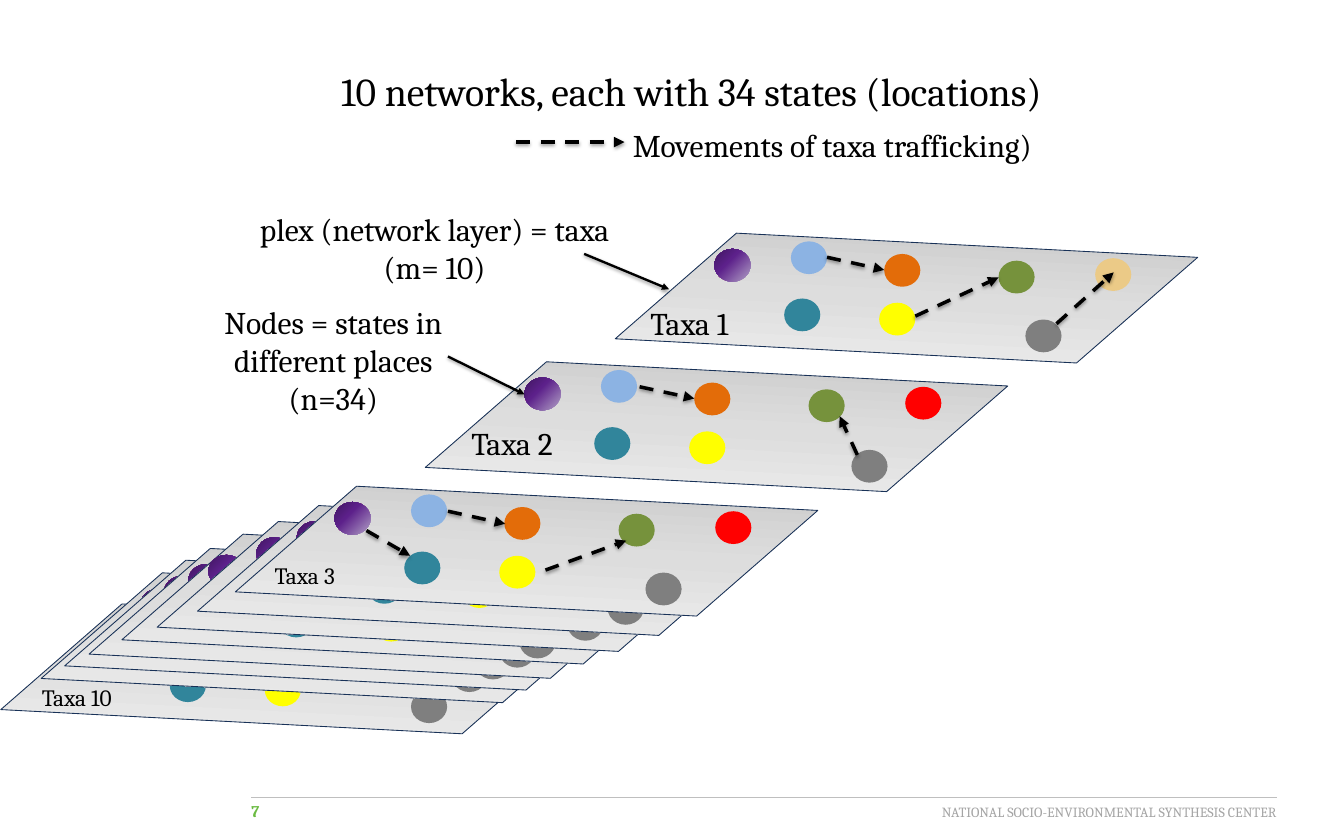
import dataclasses
from typing import Optional

import pptx
import pptx.dml.color
import pptx.enum.dml
import pptx.enum.shapes
import pptx.enum.text
import pptx.oxml
import pptx.oxml.ns
import pptx.util

Inches = pptx.util.Inches
Pt = pptx.util.Pt
RGB = pptx.dml.color.RGBColor.from_string
ALIGN = pptx.enum.text.PP_ALIGN
SHAPES = pptx.enum.shapes.MSO_SHAPE
Point = tuple[float, float]


@dataclasses.dataclass(frozen=True)
class Theme:
    font: str = "Cambria"
    title_size: float = 34
    label_size: float = 27
    small_size: float = 20
    number_size: float = 14
    footer_size: float = 12
    ink: str = "000000"
    number: str = "6BBB42"
    footer: str = "A5A5A5"
    rule: str = "BFBFBF"
    plane_edge: str = "193258"
    plane_stops: tuple = ((0, "CACACA"), (50, "DDDDDD"), (100, "EEEEEE"))
    purple_stops: tuple = ((0, "401660"), (39, "5D218B"), (100, "B2A0C7"))
    red: str = "FF0000"
    sand: str = "EBCA87"


@dataclasses.dataclass(frozen=True)
class State:
    """A node, placed relative to the corner of its network layer."""
    x: float
    y: float
    color: Optional[str]


@dataclasses.dataclass(frozen=True)
class Layer:
    left: float
    top: float
    shift: Point = (0, 0)
    last_color: str = "FF0000"
    gray_at: Point = (4.85, 0.92)


@dataclasses.dataclass(frozen=True)
class Label:
    lines: tuple[str, ...]
    box: tuple[float, float, float, float]
    size: float
    align: ALIGN = ALIGN.LEFT
    color: str = "000000"
    bold: bool = False
    side_inset: float = 0.1


@dataclasses.dataclass(frozen=True)
class Arrow:
    start: Point
    end: Point
    dashed: bool = True


THEME = Theme()
PLANE_SIZE = (6.87, 1.33)
NODE_SIZE = (0.43, 0.39)

# A colour of None stands for the purple gradient
STATES = (
    State(1.15, 0.08, None),
    State(2.06, -0.01, "8CB3E3"),
    State(1.98, 0.67, "31859B"),
    State(4.53, 0.22, "76923C"),
    State(3.17, 0.14, "E36C09"),
    State(3.11, 0.72, "FFFF00"),
)
LAST_STATE_AT = (5.68, 0.19)
GRAY = "7F7F7F"

LAYERS = (
    Layer(0.04, 7.29),
    Layer(0.52, 6.92),
    Layer(0.8, 6.77),
    Layer(1.09, 6.63),
    Layer(1.48, 6.46, shift=(-0.15, 0.06)),
    Layer(1.9, 6.31),
    Layer(2.38, 6.12),
    Layer(2.83, 5.89),
    Layer(7.35, 2.88, last_color=THEME.sand),
    Layer(5.09, 4.41, gray_at=(5.04, 0.94)),
)

ARROWS = (
    Arrow((6.14, 1.69), (7.43, 1.69)),
    Arrow((6.95, 3.02), (7.96, 3.44), dashed=False),
    Arrow((5.33, 4.24), (6.24, 4.69), dashed=False),
    Arrow((9.84, 3.06), (10.52, 3.21)),
    Arrow((10.89, 3.76), (11.88, 3.3)),
    Arrow((12.57, 3.85), (13.25, 3.24)),
    Arrow((7.61, 4.6), (8.26, 4.74)),
    Arrow((10.2, 5.41), (9.99, 4.95)),
    Arrow((6.49, 6.78), (7.45, 6.43)),
    Arrow((4.36, 6.31), (4.88, 6.61)),
    Arrow((5.33, 6.08), (6.01, 6.23)),
)

TITLE = Label(("10 networks, each with 34 states (locations)",),
              (3.96, 0.74, 9.79, 0.67), THEME.title_size)
LABELS = (
    Label(("Movements of taxa trafficking)",), (7.43, 1.45, 5.82, 0.56), THEME.label_size),
    Label(("plex (network layer) = taxa (m= 10)",), (2.83, 2.45, 4.68, 1.01),
          THEME.label_size, ALIGN.CENTER),
    Label(("Nodes = states in different places", "(n=34)"), (2.2, 3.56, 3.53, 1.46),
          THEME.label_size, ALIGN.CENTER),
    Label(("Taxa 1",), (7.64, 3.57, 1.45, 0.56), THEME.label_size),
    Label(("Taxa 2",), (5.51, 4.99, 1.45, 0.56), THEME.label_size),
    Label(("Taxa 3",), (3.17, 6.62, 1.91, 0.44), THEME.small_size),
    Label(("Taxa 10",), (0.4, 8.08, 1.91, 0.44), THEME.small_size),
    Label(("7",), (2.99, 9.48, 0.58, 0.29), THEME.number_size,
          color=THEME.number, bold=True, side_inset=0),
    Label(("NATIONAL SOCIO-ENVIRONMENTAL SYNTHESIS CENTER",), (10.14, 9.51, 5.05, 0.3),
          THEME.footer_size, ALIGN.RIGHT, THEME.footer, side_inset=0),
)


def drawing_xml(tag: str, attributes: str = "", inner: str = ""):
    return pptx.oxml.parse_xml(
        f'<a:{tag} {pptx.oxml.ns.nsdecls("a")} {attributes}>{inner}</a:{tag}>')


def fill_gradient(shape, stops: tuple, direction: str) -> None:
    shape.fill.gradient()
    properties = shape._element.spPr
    default = properties.find(pptx.oxml.ns.qn("a:gradFill"))
    stop_xml = "".join(f'<a:gs pos="{position * 1000}"><a:srgbClr val="{color}"/></a:gs>'
                       for position, color in stops)
    properties.replace(default, drawing_xml(
        "gradFill", 'rotWithShape="1"', f"<a:gsLst>{stop_xml}</a:gsLst>{direction}"))


def draw_node(slide, x: float, y: float, color: Optional[str]) -> None:
    node = slide.shapes.add_shape(SHAPES.OVAL, Inches(x), Inches(y), *map(Inches, NODE_SIZE))
    node.shadow.inherit = False
    node.line.fill.background()
    if color is None:
        fill_gradient(node, THEME.purple_stops,
                      '<a:path path="circle"><a:fillToRect r="100000" b="100000"/></a:path>')
    else:
        node.fill.solid()
        node.fill.fore_color.rgb = RGB(color)


def draw_layer(slide, layer: Layer) -> None:
    plane = slide.shapes.add_shape(SHAPES.FLOWCHART_DATA, Inches(layer.left),
                                   Inches(layer.top), *map(Inches, PLANE_SIZE))
    plane.rotation = 3
    plane.shadow.inherit = False
    fill_gradient(plane, THEME.plane_stops, '<a:lin ang="5400000" scaled="0"/>')
    plane.line.color.rgb = RGB(THEME.plane_edge)
    plane.line.width = Pt(0.75)
    states = STATES + (State(*LAST_STATE_AT, layer.last_color), State(*layer.gray_at, GRAY))
    for state in states:
        draw_node(slide, layer.left + layer.shift[0] + state.x,
                  layer.top + layer.shift[1] + state.y, state.color)


def draw_line(slide, start: Point, end: Point, color: str, width: float, effect: str = ""):
    line = slide.shapes.add_connector(pptx.enum.shapes.MSO_CONNECTOR.STRAIGHT,
                                      *map(Inches, start + end))
    line.line.color.rgb = RGB(color)
    line.line.width = Pt(width)
    line._element.spPr.append(drawing_xml("effectLst", inner=effect))
    return line


def draw_arrow(slide, arrow: Arrow) -> None:
    shadow = ('<a:outerShdw blurRad="39370" dist="20320" dir="5400000" rotWithShape="0">'
              '<a:srgbClr val="000000"><a:alpha val="38000"/></a:srgbClr></a:outerShdw>')
    connector = draw_line(slide, arrow.start, arrow.end, THEME.ink,
                          3 if arrow.dashed else 2, shadow)
    if arrow.dashed:
        connector.line.dash_style = pptx.enum.dml.MSO_LINE.DASH
    connector.line._get_or_add_ln().append(drawing_xml("tailEnd", 'type="triangle"'))


def write_label(shape, label: Label) -> None:
    shape.left, shape.top, shape.width, shape.height = map(Inches, label.box)
    frame = shape.text_frame
    frame.word_wrap = True
    frame.auto_size = pptx.enum.text.MSO_AUTO_SIZE.SHAPE_TO_FIT_TEXT
    frame.vertical_anchor = pptx.enum.text.MSO_ANCHOR.TOP
    frame.margin_left = frame.margin_right = Inches(label.side_inset)
    for index, line in enumerate(label.lines):
        paragraph = frame.add_paragraph() if index else frame.paragraphs[0]
        paragraph.alignment = label.align
        run = paragraph.add_run()
        run.text = line
        run.font.name = THEME.font
        run.font.size = Pt(label.size)
        run.font.bold = label.bold
        run.font.color.rgb = RGB(label.color)


def main() -> None:
    presentation = pptx.Presentation()
    presentation.slide_width, presentation.slide_height = Inches(15.99), Inches(9.99)
    slide = presentation.slides.add_slide(presentation.slide_layouts.get_by_name("Title Only"))
    write_label(slide.shapes.title, TITLE)
    draw_line(slide, (2.99, 9.48), (15.19, 9.48), THEME.rule, 0.75)
    for layer in LAYERS:
        draw_layer(slide, layer)
    for arrow in ARROWS:
        draw_arrow(slide, arrow)
    for label in LABELS:
        write_label(slide.shapes.add_textbox(*map(Inches, label.box)), label)
    presentation.save("out.pptx")


if __name__ == "__main__":
    main()
